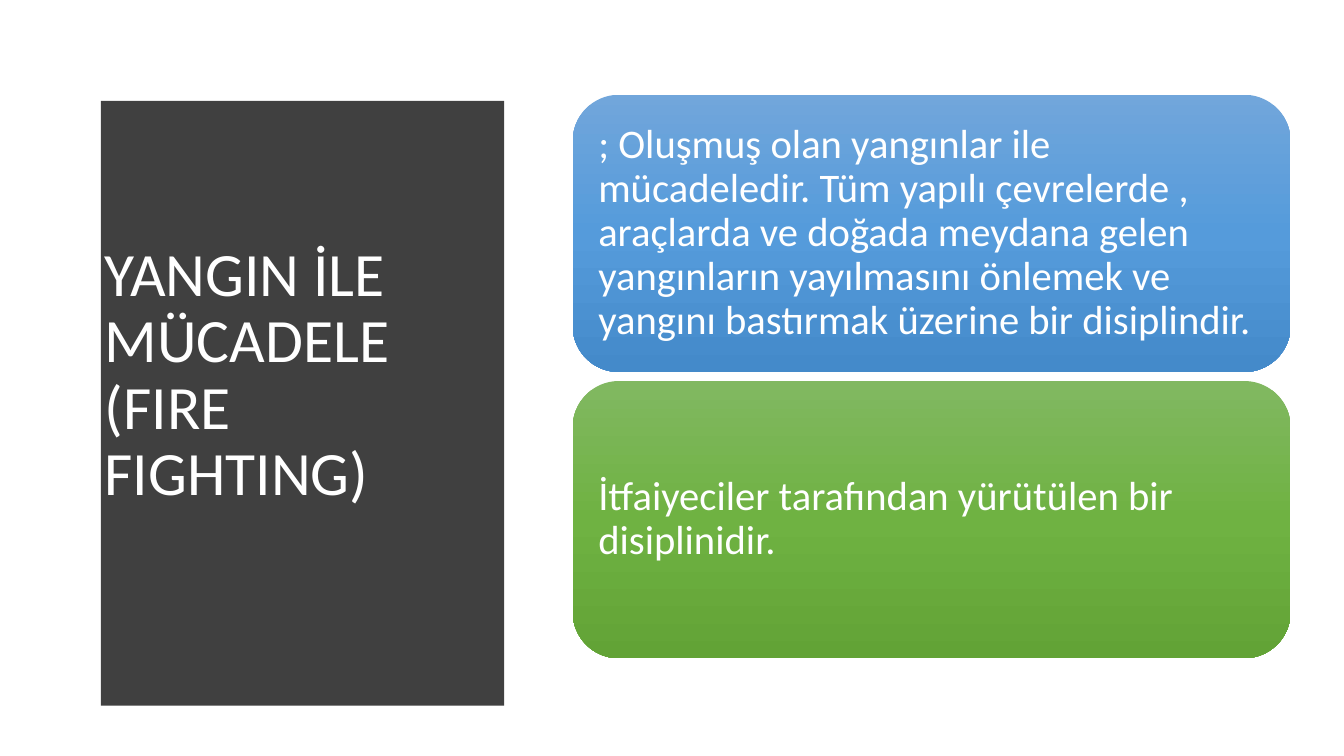
from copy import deepcopy
from pptx import Presentation, util as u
from pptx.dml.color import RGBColor
from pptx.enum import shapes, text
from pptx.oxml.ns import qn

deck = Presentation()
deck.slide_width, deck.slide_height = u.Inches(13.33), u.Inches(7.5)
page = deck.slides.add_slide(deck.slide_layouts[6])


def color(value):
    return RGBColor.from_string(value)


def write(box, words, size, inset_x, inset_y, space_after):
    frame = box.text_frame
    layout = {
        "word_wrap": True,
        "vertical_anchor": text.MSO_ANCHOR.MIDDLE,
        "margin_left": u.Inches(inset_x),
        "margin_right": u.Inches(inset_x),
        "margin_top": u.Inches(inset_y),
        "margin_bottom": u.Inches(inset_y),
    }
    for name, value in layout.items():
        setattr(frame, name, value)
    para = frame.paragraphs[0]
    spacing = {
        "alignment": text.PP_ALIGN.LEFT,
        "line_spacing": 0.9,
        "space_after": u.Pt(space_after),
    }
    for name, value in spacing.items():
        setattr(para, name, value)
    span = para.add_run()
    span.text = words
    for name, value in {"name": "Calibri", "size": u.Pt(size)}.items():
        setattr(span.font, name, value)
    span.font.color.rgb = color("FFFFFF")


left, top, bottom = 0.53, 0.52, 6.96
corner, bulge, steps = 5.08, 0.24, 40
edge = []
for step in range(steps + 1):
    share = step / steps
    x = corner + bulge * (1 - (2 * share - 1) ** 2)
    edge.append((x, top + share * (bottom - top)))
outline = page.shapes.build_freeform(left, top, scale=u.Inches(1))
outline.add_line_segments(edge + [(left, bottom)], close=True)
panel = outline.convert_to_shape()
panel.shadow.inherit = False
panel.fill.solid()
panel.fill.fore_color.rgb = color("404040")
panel.line.fill.background()

title = page.shapes.add_textbox(*map(u.Inches, (0.94, 1.11, 3.74, 5.24)))
write(title, "YANGIN İLE MÜCADELE (FIRE FIGHTING)", 44, 0.1, 0.05, 0)

cards = [
    (
        "; Oluşmuş olan yangınlar ile mücadeledir. Tüm yapılı çevrelerde , "
        "araçlarda ve doğada meydana gelen yangınların yayılmasını önlemek ve "
        "yangını bastırmak üzerine bir disiplindir.",
        ("71A6DB", "559BDB", "448ACA"),
    ),
    (
        "İtfaiyeciler tarafından yürütülen bir disiplinidir.",
        ("81B861", "6FB242", "62A336"),
    ),
]
card_left, card_top, card_width, card_height, pitch = 5.68, 0.94, 7.12, 2.75, 2.84
for row, (words, shades) in enumerate(cards):
    place = (card_left, card_top + row * pitch, card_width, card_height)
    card = page.shapes.add_shape(
        shapes.MSO_SHAPE.ROUNDED_RECTANGLE, *map(u.Inches, place)
    )
    card.shadow.inherit = False
    card.line.fill.background()
    card.fill.gradient()
    card.fill.gradient_angle = 270
    stop_list = card._element.spPr.find(qn("a:gradFill")).find(qn("a:gsLst"))
    stop_list.insert(1, deepcopy(stop_list[0]))
    for index, (stop, shade) in enumerate(zip(card.fill.gradient_stops, shades)):
        stop.position = index / 2
        stop.color.rgb = color(shade)
    write(card, words, 29, 0.12, 0.12, 0)

deck.save("out.pptx")
